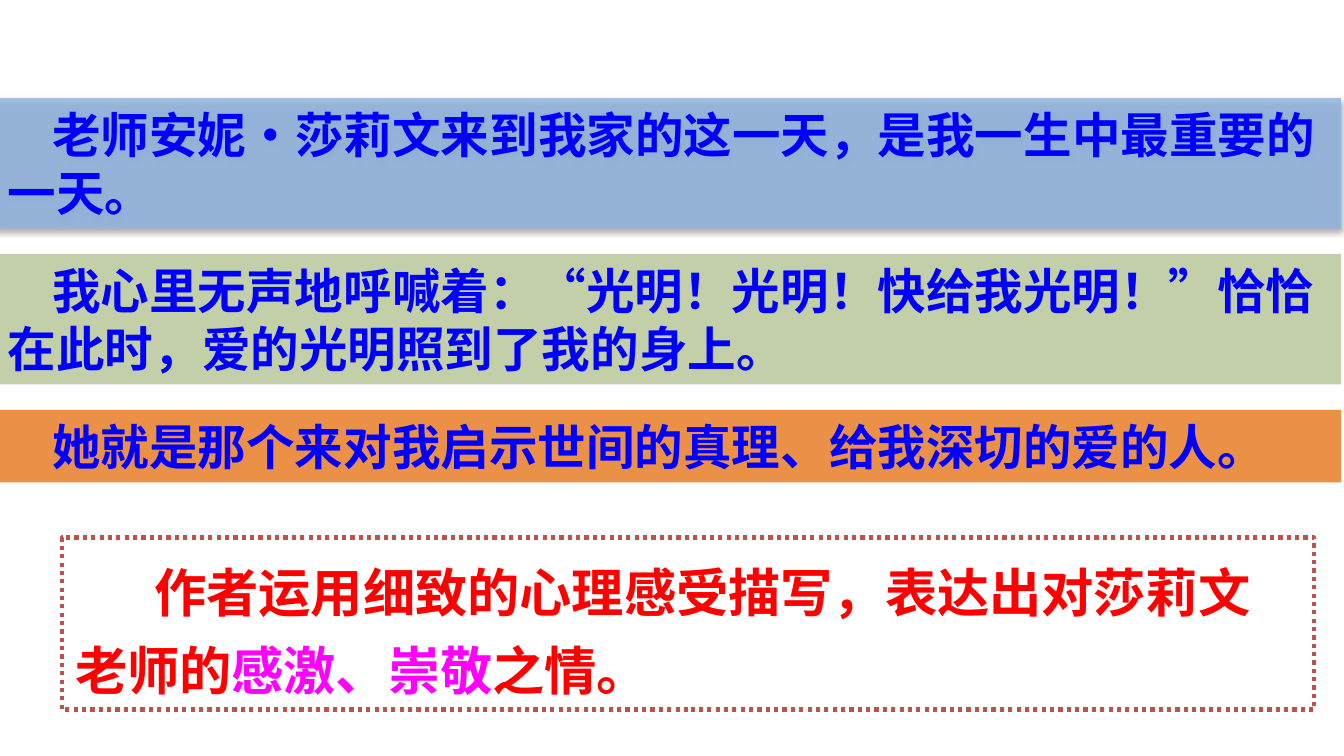
import pptx
import pptx.dml.color
import pptx.enum.dml
import pptx.enum.shapes
import pptx.enum.text
import pptx.oxml
import pptx.oxml.ns
import pptx.util
from lxml import etree
from pptx.util import Inches

FONT = "Noto Sans CJK SC"
COLORS = {
    "sky": "8EB4E3", "olive": "77933C", "orange": "E46C0A", "white": "FFFFFF",
    "border": "C0504D", "quote": "0000FF", "comment": "FF0000",
    "emphasis": "FF00FF", "shadow": "000000",
}
QUOTES = [
    ("老师安妮·莎莉文来到我家的这一天，是我一生中最重要的一天。", "sky", 79, 0.97),
    ("我心里无声地呼喊着：“光明！光明！快给我光明！”恰恰在此时，爱的光明照到了我的身上。",
     "olive", 44, 0.97),
    ("她就是那个来对我启示世间的真理、给我深切的爱的人。", "orange", 75, 0.54),
]
COMMENT = [
    ("作者运用细致的心理感受描写，表达出对莎莉文老师的", "comment"),
    ("感激、崇敬", "emphasis"),
    ("之情。", "comment"),
]


def rgb(name):
    return pptx.dml.color.RGBColor.from_string(COLORS[name])


def add_child(parent, tag, **attributes):
    return etree.SubElement(parent, pptx.oxml.ns.qn(tag), attributes)


def add_panel(slide, box, color, opacity):
    panel = slide.shapes.add_shape(
        pptx.enum.shapes.MSO_SHAPE.RECTANGLE, *[Inches(length) for length in box])
    panel.shadow.inherit = False
    panel.fill.solid()
    panel.fill.fore_color.rgb = rgb(color)
    shade = panel.fill._xPr.find(".//" + pptx.oxml.ns.qn("a:srgbClr"))
    add_child(shade, "a:alpha", val=str(opacity * 1000))
    panel.line.fill.background()
    panel.text_frame.word_wrap = True
    panel.text_frame.vertical_anchor = pptx.enum.text.MSO_ANCHOR.TOP
    return panel


def write_paragraph(panel, pieces, size, indent, line_pitch):
    paragraph = panel.text_frame.paragraphs[0]
    paragraph.alignment = pptx.enum.text.PP_ALIGN.LEFT
    paragraph.line_spacing = pptx.util.Pt(line_pitch)
    paragraph.font.size = pptx.util.Pt(size)
    paragraph.font.bold = True
    paragraph.font.name = FONT
    properties = paragraph._p.get_or_add_pPr()
    properties.set("marL", "0")
    properties.set("indent", str(Inches(indent)))
    add_child(properties.find(pptx.oxml.ns.qn("a:defRPr")), "a:ea", typeface=FONT)
    for wording, color in pieces:
        run = paragraph.add_run()
        run.text = wording
        run.font.color.rgb = rgb(color)
        add_child(run._r.get_or_add_rPr(), "a:ea", typeface=FONT)


def add_soft_shadow(panel):
    effects = panel._element.spPr.find(pptx.oxml.ns.qn("a:effectLst"))
    shadow = add_child(effects, "a:outerShdw", blurRad=str(pptx.util.Pt(3.1)),
                       dist=str(pptx.util.Pt(1.6)), dir="5400000", rotWithShape="0")
    shade = add_child(shadow, "a:srgbClr", val=COLORS["shadow"])
    add_child(shade, "a:alpha", val="38000")


def add_quotes(slide, left, top, width, gap):
    bands = []
    for wording, color, opacity, height in QUOTES:
        band = add_panel(slide, (left, top, width, height), color, opacity)
        write_paragraph(band, [(wording, "quote")], 26, 0.33, 31.2)
        bands.append(band)
        top += height + gap
    add_soft_shadow(bands[0])


def add_comment(slide, box):
    comment = add_panel(slide, box, "white", 26)
    comment.line.color.rgb = rgb("border")
    comment.line.width = pptx.util.Pt(2.25)
    comment.line.dash_style = pptx.enum.dml.MSO_LINE.ROUND_DOT
    write_paragraph(comment, COMMENT, 28, 0.59, 42)


def main():
    deck = pptx.Presentation()
    deck.slide_width = Inches(10)
    deck.slide_height = deck.slide_width * 9 // 16
    slide = deck.slides.add_slide(deck.slide_layouts[6])
    add_quotes(slide, -0.04, 0.73, 10.02, 0.19)
    add_comment(slide, (0.46, 4, 9.32, 1.28))
    deck.save("out.pptx")


if __name__ == "__main__":
    main()
